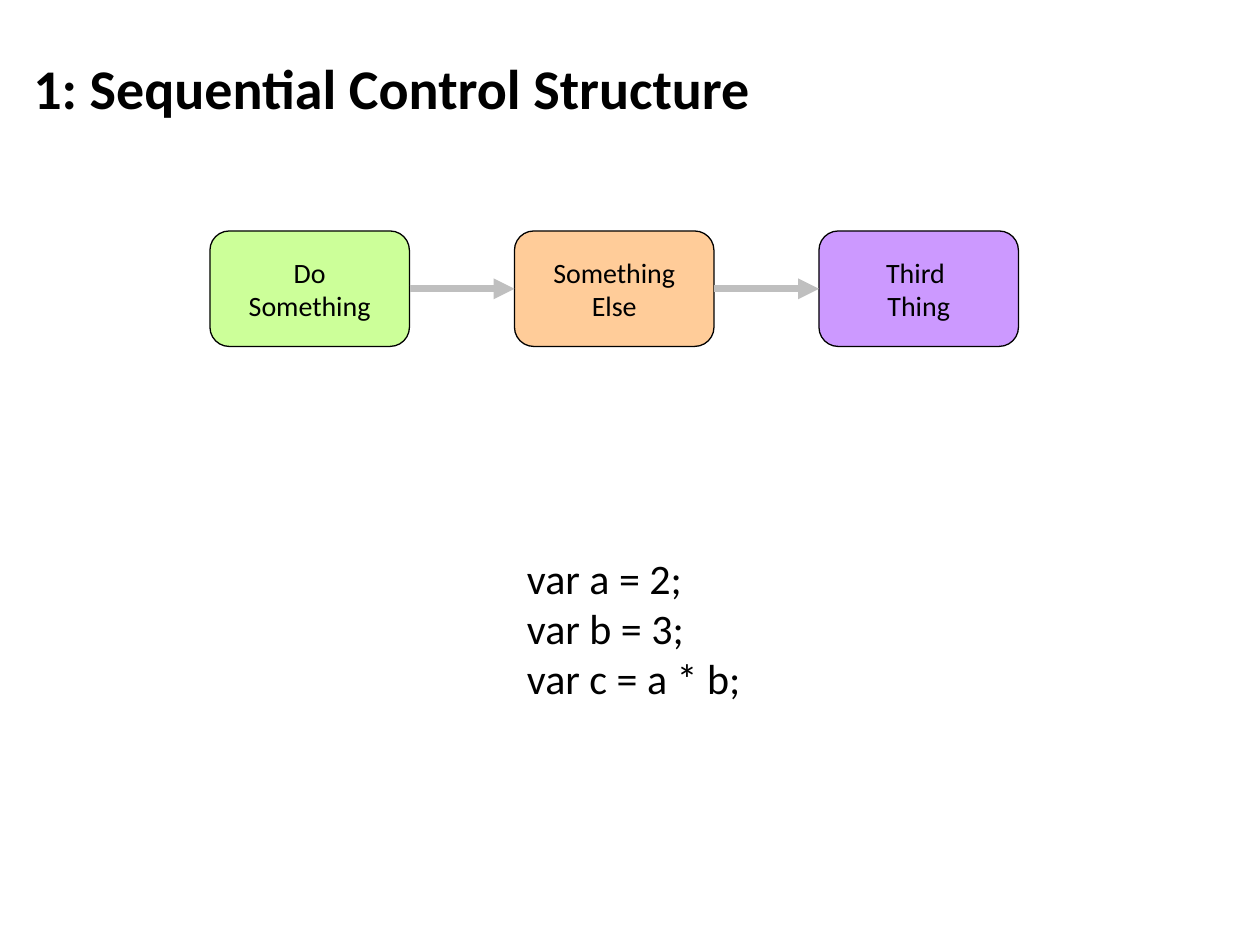
"""Build a slide that explains the sequential control structure."""
from itertools import pairwise

from lxml.etree import SubElement
from pptx import Presentation
from pptx.dml.color import RGBColor
from pptx.enum.shapes import MSO_CONNECTOR as Connector, MSO_SHAPE as Shape
from pptx.enum.text import MSO_ANCHOR as Anchor, MSO_AUTO_SIZE as AutoSize, PP_ALIGN as Align
from pptx.oxml.ns import qn
from pptx.util import Inches, Pt

BLACK = RGBColor(0x00, 0x00, 0x00)
GREY = RGBColor(0xBF, 0xBF, 0xBF)
GREEN = RGBColor(0xCC, 0xFF, 0x99)
ORANGE = RGBColor(0xFF, 0xCC, 0x99)
PURPLE = RGBColor(0xCC, 0x99, 0xFF)


def write_text(shape, text, size, align=Align.LEFT, bold=False):
    shape.text_frame.text = text
    for paragraph in shape.text_frame.paragraphs:
        paragraph.alignment = align
        for run in paragraph.runs:
            run.font.name = "Calibri"
            run.font.size = Pt(size)
            run.font.bold = bold
            run.font.color.rgb = BLACK


presentation = Presentation()
presentation.slide_width, presentation.slide_height = Inches(10), Inches(7.5)
slide = presentation.slides.add_slide(presentation.slide_layouts[6])
unit = presentation.slide_width / 120

title = slide.shapes.add_textbox(*(int(n * unit) for n in (2, 1.5, 114, 13.5)))
title.text_frame.word_wrap = True
title.text_frame.vertical_anchor = Anchor.MIDDLE
write_text(title, "1: Sequential Control Structure", 32, bold=True)

code = slide.shapes.add_textbox(*(int(n * unit) for n in (49, 52, 23.6, 15.75)))
code.text_frame.word_wrap = False
code.text_frame.auto_size = AutoSize.SHAPE_TO_FIT_TEXT
write_text(code, "var a = 2;\nvar b = 3;\nvar c = a * b;", 24)

step_left, step_top, step_width, step_height, gap = 20, 22, 19, 11, 10
steps = []
for index, (label, color) in enumerate([
    ("Do\nSomething", GREEN),
    ("Something Else", ORANGE),
    ("Third \vThing", PURPLE),
]):
    left = step_left + index * (step_width + gap)
    step = slide.shapes.add_shape(
        Shape.ROUNDED_RECTANGLE,
        *(int(n * unit) for n in (left, step_top, step_width, step_height)),
    )
    step.shadow.inherit = False
    step.fill.solid()
    step.fill.fore_color.rgb = color
    step.line.color.rgb = BLACK
    step.line.width = Pt(0.75)
    step.text_frame.vertical_anchor = Anchor.MIDDLE
    write_text(step, label, 16, Align.CENTER)
    steps.append(step)

for source, target in pairwise(steps):
    arrow = slide.shapes.add_connector(Connector.ELBOW, 0, 0, 0, 0)
    arrow.begin_connect(source, 3)
    arrow.end_connect(target, 1)
    arrow.line.color.rgb = GREY
    arrow.line.width = Pt(4)
    SubElement(arrow.line._get_or_add_ln(), qn("a:tailEnd"), type="triangle")
    SubElement(arrow._element.spPr, qn("a:effectLst"))

presentation.save("out.pptx")
